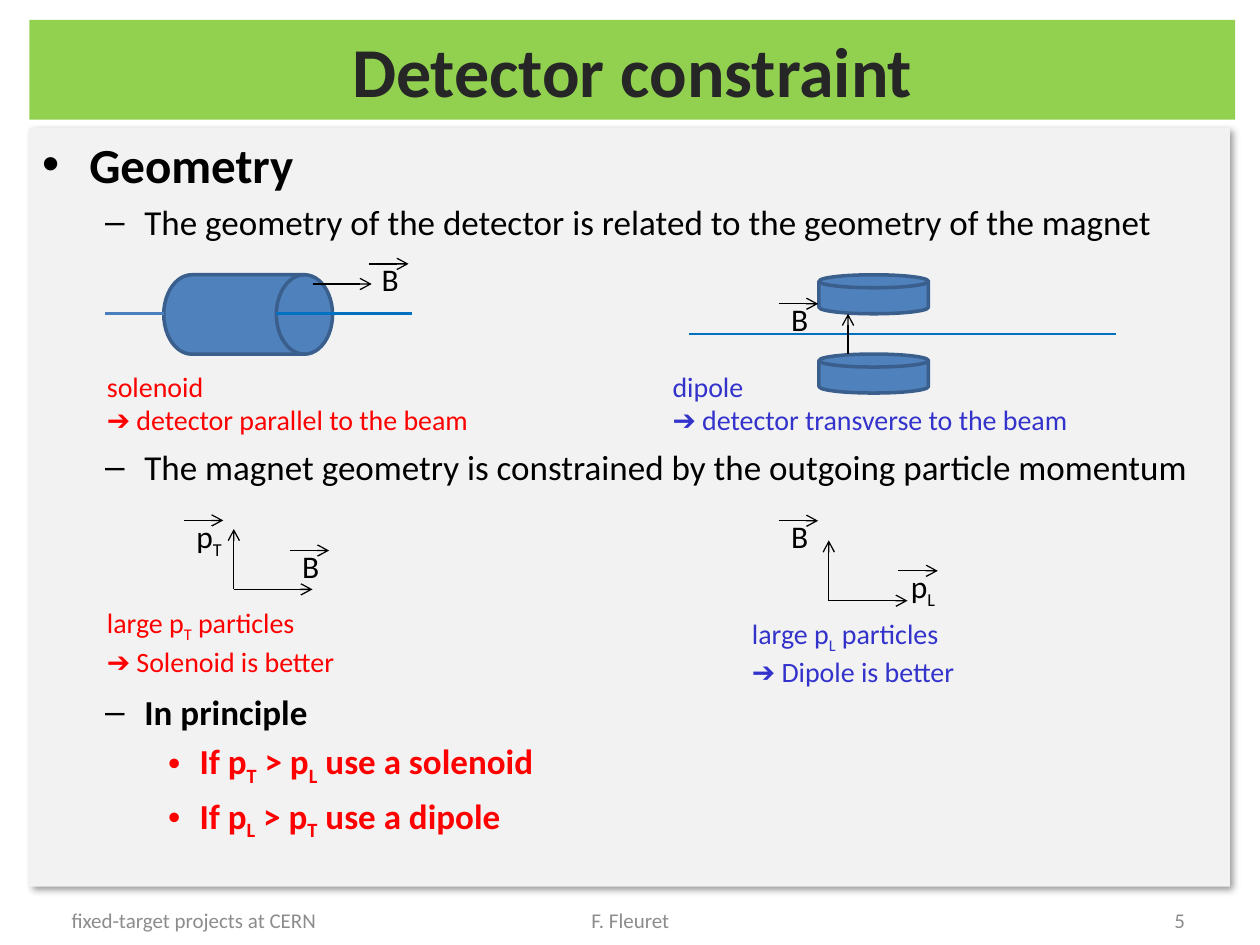
from lxml import etree
from pptx import Presentation
from pptx.dml.color import RGBColor
from pptx.enum.shapes import MSO_CONNECTOR, MSO_SHAPE
from pptx.enum.text import MSO_ANCHOR, MSO_AUTO_SIZE, PP_ALIGN
from pptx.oxml import parse_xml
from pptx.oxml.ns import nsdecls, qn
from pptx.util import Pt

DRUM = MSO_SHAPE.FLOWCHART_DIRECT_ACCESS_STORAGE
DISK = MSO_SHAPE.FLOWCHART_MAGNETIC_DISK
STRAIGHT = MSO_CONNECTOR.STRAIGHT
LEFT, CENTER, RIGHT = PP_ALIGN.LEFT, PP_ALIGN.CENTER, PP_ALIGN.RIGHT
TOP, MIDDLE = MSO_ANCHOR.TOP, MSO_ANCHOR.MIDDLE
NO_FIT = MSO_AUTO_SIZE.NONE

BLACK = RGBColor(0x00, 0x00, 0x00)
DARK = RGBColor(0x26, 0x26, 0x26)
GRAY = RGBColor(0x8C, 0x8C, 0x8C)
PANEL = RGBColor(0xF2, 0xF2, 0xF2)
GREEN = RGBColor(0x92, 0xD0, 0x50)
RED = RGBColor(0xFF, 0x00, 0x00)
VIOLET = RGBColor(0x33, 0x33, 0xCC)
MAGNET = RGBColor(0x4F, 0x81, 0xBD)
MAGNET_EDGE = RGBColor(0x3A, 0x5F, 0x8C)
BEAM = RGBColor(0x00, 0x70, 0xC0)
BEAM_IN = RGBColor(0x4B, 0x7E, 0xBC)

FONT = "Calibri"
DIAGRAM_GAP = 116

TITLE = "Detector constraint"
# level, text, size, bold, colour, space before
BODY = [
    (0, "Geometry", 28, True, BLACK, None),
    (1, "The geometry of the detector is related to the geometry of the magnet",
     20, False, BLACK, None),
    (1, "The magnet geometry is constrained by the outgoing particle momentum",
     20, False, BLACK, DIAGRAM_GAP),
    (1, "In principle", 20, True, BLACK, DIAGRAM_GAP),
    (2, "If p_T > p_L use a solenoid", 20, True, RED, None),
    (2, "If p_L > p_T use a dipole", 20, True, RED, None),
]
CAPTIONS = [
    (54, 207.4, 227, ["solenoid", "➔ detector parallel to the beam"], RED),
    (377.3, 207.4, 261, ["dipole", "➔ detector transverse to the beam"], VIOLET),
    (54, 342.7, 176, ["large p_T particles", "➔ Solenoid is better"], RED),
    (422.6, 348.5, 176, ["large p_L particles", "➔ Dipole is better"], VIOLET),
]
FOOTERS = [
    (33.8, 173, "fixed-target projects at CERN", LEFT),
    (246.2, 228, "F. Fleuret", CENTER),
    (516.2, 168, "5", RIGHT),
]
MAGNETS = [
    (DRUM, 93.6, 157, 96.5, 45.4),
    (DISK, 468, 157, 62.6, 22.3),
    (DISK, 468, 202.3, 62.6, 22.3),
]
BEAMS = [
    (157.7, 179.3, 235.4, 179.3, BEAM),
    (93.6, 179.3, 59.8, 179.3, BEAM_IN),
    (393.8, 190.8, 637.9, 190.8, BEAM),
]
FIELDS = [(178.6, 162.3, 212.4, 162.3), (484.6, 202.3, 484.6, 179.3)]
AXES = [(133.6, 336.8), (473.6, 343.3)]
VECTORS = [
    ("B", 211, 145.2), ("B", 445, 168), ("B", 165.6, 309),
    ("B", 445, 292), ("p_T", 105.1, 291.8), ("p_L", 513.4, 320.6),
]


def write(p, text, size, color, bold=False):
    head, *rest = text.split("_")
    pieces = [(head, False)]
    for part in rest:
        pieces += [(part[0], True), (part[1:], False)]
    for piece, lowered in pieces:
        if not piece:
            continue
        r = p.add_run()
        r.text = piece
        r.font.name, r.font.size, r.font.bold = FONT, Pt(size), bold
        r.font.color.rgb = color
        if lowered:
            r._r.get_or_add_rPr().set("baseline", "-25000")


def add_text(s, x, y, w, h, lines, size, color, align=LEFT, anchor=TOP, wrap=True):
    tf = s.shapes.add_textbox(Pt(x), Pt(y), Pt(w), Pt(h)).text_frame
    tf.word_wrap, tf.vertical_anchor = wrap, anchor
    for i, line in enumerate(lines):
        p = tf.add_paragraph() if i else tf.paragraphs[0]
        p.alignment = align
        write(p, line, size, color)


def add_line(s, x1, y1, x2, y2, color=BLACK, width=0.75, arrow=True):
    c = s.shapes.add_connector(STRAIGHT, Pt(x1), Pt(y1), Pt(x2), Pt(y2))
    c.line.color.rgb, c.line.width = color, Pt(width)
    if arrow:
        etree.SubElement(c.line._get_or_add_ln(), qn("a:tailEnd"), type="arrow")
    etree.SubElement(c._element.spPr, qn("a:effectLst"))


def fill_placeholder(sp, x, y, w, h, color, anchor):
    sp.left, sp.top, sp.width, sp.height = Pt(x), Pt(y), Pt(w), Pt(h)
    sp.fill.solid()
    sp.fill.fore_color.rgb = color
    tf = sp.text_frame
    tf.auto_size, tf.vertical_anchor, tf.word_wrap = NO_FIT, anchor, True
    return tf


prs = Presentation()
prs.slide_width, prs.slide_height = Pt(720), Pt(540)
s = prs.slides.add_slide(prs.slide_layouts[1])

tf = fill_placeholder(s.shapes.title, 16.8, 11.4, 689, 57, GREEN, MIDDLE)
tf.paragraphs[0].alignment = CENTER
write(tf.paragraphs[0], TITLE, 40, DARK, True)

body = s.placeholders[1]
tf = fill_placeholder(body, 16.8, 73.2, 686, 433.5, PANEL, TOP)
body._element.spPr.append(parse_xml(
    f'<a:effectLst {nsdecls("a")}><a:outerShdw blurRad="{Pt(4)}" dist="{Pt(3)}" '
    'dir="2700000" algn="tl" rotWithShape="0"><a:srgbClr val="000000">'
    '<a:alpha val="40000"/></a:srgbClr></a:outerShdw></a:effectLst>'))
for i, (level, text, size, bold, color, gap) in enumerate(BODY):
    p = tf.add_paragraph() if i else tf.paragraphs[0]
    p.level = level
    if gap:
        p.space_before = Pt(gap)
    write(p, text, size, color, bold)

for x, w, text, align in FOOTERS:
    add_text(s, x, 517.7, w, 16.6, [text], 12, GRAY, align, MIDDLE)
for x, y, w, lines, color in CAPTIONS:
    add_text(s, x, y, w, 46, lines, 16, color)

for kind, x, y, w, h in MAGNETS:
    sp = s.shapes.add_shape(kind, Pt(x), Pt(y), Pt(w), Pt(h))
    sp.shadow.inherit = False
    sp.fill.solid()
    sp.fill.fore_color.rgb = MAGNET
    sp.line.color.rgb, sp.line.width = MAGNET_EDGE, Pt(2)
for *ends, color in BEAMS:
    add_line(s, *ends, color, 1.5, arrow=False)
for ends in FIELDS:
    add_line(s, *ends)
for x, y in AXES:
    add_line(s, x, y, x + 45, y)
    add_line(s, x, y, x, y - 34.5)
for text, x, y in VECTORS:
    add_text(s, x, y, 24.5 if text == "B" else 30, 29, [text], 18, BLACK, wrap=False)
    add_line(s, x, y + 5.6, x + 22.5, y + 5.6)

prs.save("out.pptx")
